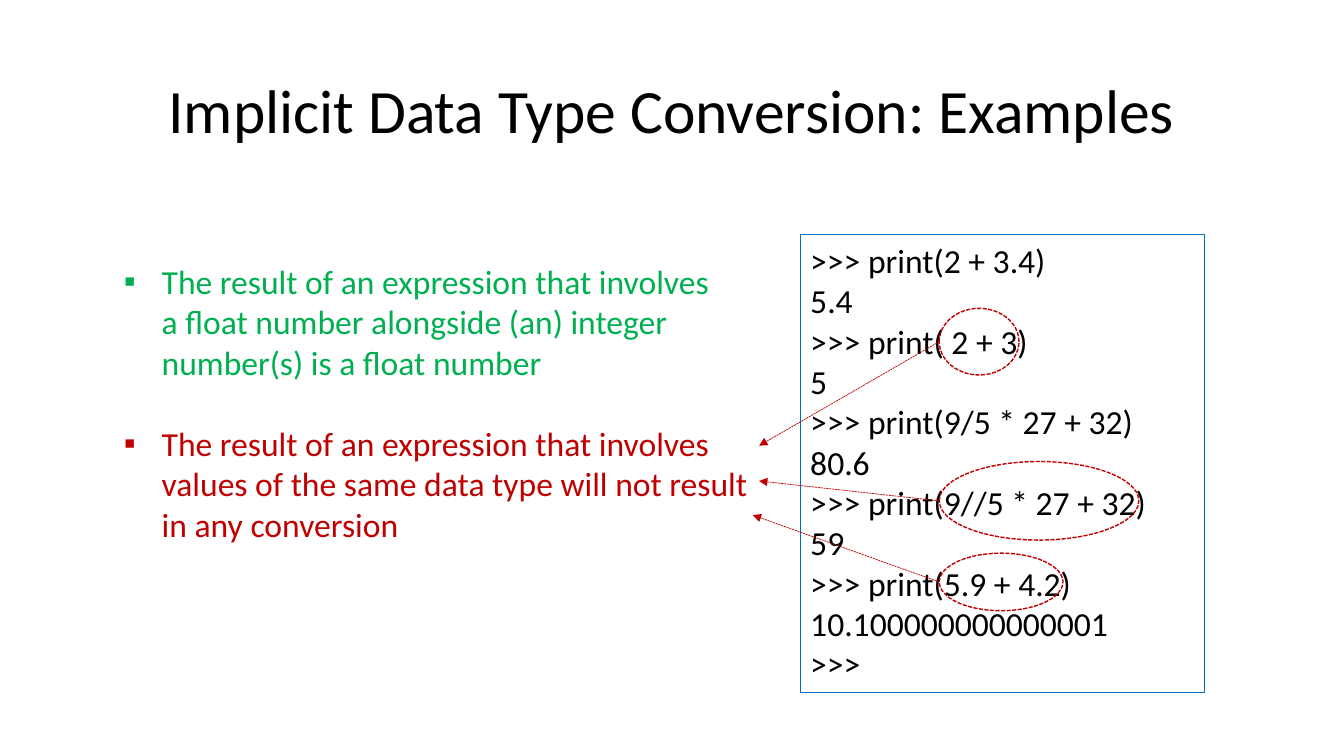
from dataclasses import dataclass

from lxml.etree import SubElement
from pptx import Presentation
from pptx.dml.color import RGBColor
from pptx.enum.dml import MSO_LINE
from pptx.enum.shapes import MSO_CONNECTOR, MSO_SHAPE
from pptx.enum.text import MSO_ANCHOR, MSO_AUTO_SIZE, PP_ALIGN
from pptx.oxml.ns import qn
from pptx.util import Cm, Pt

COLORS = {"text": "000000", "frame": "0070C0", "converted": "00B050", "unchanged": "C00000"}
BULLET_INDENT = Cm(0.95)
CIRCLE_LEFT = 23.67

TITLE = "Implicit Data Type Conversion: Examples"
CONSOLE_LINES = [
    ">>> print(2 + 3.4)", "5.4",
    ">>> print( 2 + 3)", "5",
    ">>> print(9/5 * 27 + 32)", "80.6",
    ">>> print(9//5 * 27 + 32)", "59",
    ">>> print(5.9 + 4.2)", "10.100000000000001",
    ">>>",
]


@dataclass
class Rule:
    text: str
    color: str
    gap_before: float


@dataclass
class Callout:
    """A circled expression and the tip of its arrow, in centimetres."""
    top: float
    width: float
    height: float
    tip_x: float
    tip_y: float


RULES = [
    Rule("The result of an expression that involves\n"
         "a float number alongside (an) integer\n"
         "number(s) is a float number", "converted", 0),
    Rule("The result of an expression that involves\n"
         "values of the same data type will not result\n"
         "in any conversion", "unchanged", 29.3),
]
CALLOUTS = [
    Callout(7.77, 2.01, 1.68, 19.13, 11.23),
    Callout(11.63, 5.03, 1.98, 19.13, 12.12),
    Callout(13.94, 3.12, 1.45, 18.97, 12.98),
]


def apply(target, **formats) -> None:
    for name, value in formats.items():
        setattr(target, name, value)


def color(name: str) -> RGBColor:
    return RGBColor.from_string(COLORS[name])


def place(box, left: float, top: float, width: float, height: float) -> None:
    apply(box, left=Cm(left), top=Cm(top), width=Cm(width), height=Cm(height))


def write(para, text: str, size: int, color_name: str, **formats) -> None:
    """Fill a paragraph; line breaks get the text size too, to keep line heights even."""
    para.text = text
    apply(para, **formats)
    for span in para.runs:
        apply(span.font, name="Calibri", size=Pt(size))
        span.font.color.rgb = color(color_name)
    for line_break in para._p.findall(qn("a:br")):
        SubElement(line_break, qn("a:rPr")).set("sz", str(size * 100))


def style_line(line, color_name: str, width: float, dash=None) -> None:
    line.color.rgb = color(color_name)
    apply(line, width=Pt(width), dash_style=dash)


def add_outline(page, kind, left: float, top: float, width: float, height: float):
    box = page.shapes.add_shape(kind, Cm(left), Cm(top), Cm(width), Cm(height))
    box.shadow.inherit = False
    box.fill.background()
    return box


def fill_title(page) -> None:
    title = page.shapes.title
    place(title, 2.33, 1.02, 29.21, 3.68)
    apply(title.text_frame, vertical_anchor=MSO_ANCHOR.MIDDLE, auto_size=MSO_AUTO_SIZE.NONE)
    write(title.text_frame.paragraphs[0], TITLE, 44, "text",
          alignment=PP_ALIGN.CENTER, line_spacing=0.9)


def add_console(page) -> None:
    console = add_outline(page, MSO_SHAPE.RECTANGLE, 20.17, 5.92, 10.19, 11.53)
    style_line(console.line, "frame", 0.75)
    frame = console.text_frame
    apply(frame, word_wrap=True, vertical_anchor=MSO_ANCHOR.TOP)
    frame.text = "\n".join(CONSOLE_LINES)
    for para, text in zip(frame.paragraphs, CONSOLE_LINES):
        write(para, text, 24, "text", alignment=PP_ALIGN.LEFT)


def fill_rules(page) -> None:
    body = page.placeholders[1]
    place(body, 2.87, 6.45, 16.38, 8.46)
    frame = body.text_frame
    apply(frame, word_wrap=False, auto_size=MSO_AUTO_SIZE.NONE, vertical_anchor=MSO_ANCHOR.TOP)
    for index, rule in enumerate(RULES):
        para = frame.add_paragraph() if index else frame.paragraphs[0]
        write(para, rule.text, 24, rule.color, alignment=PP_ALIGN.LEFT,
              space_before=Pt(rule.gap_before))
        properties = para._p.get_or_add_pPr()
        properties.set("marL", str(BULLET_INDENT))
        properties.set("indent", str(-BULLET_INDENT))
        SubElement(properties, qn("a:buChar")).set("char", "▪")


def add_callout(page, callout: Callout) -> None:
    circle = add_outline(page, MSO_SHAPE.OVAL, CIRCLE_LEFT, callout.top,
                         callout.width, callout.height)
    style_line(circle.line, "unchanged", 1, MSO_LINE.SQUARE_DOT)
    arrow = page.shapes.add_connector(
        MSO_CONNECTOR.STRAIGHT, Cm(CIRCLE_LEFT), Cm(callout.top + callout.height / 2),
        Cm(callout.tip_x), Cm(callout.tip_y))
    style_line(arrow.line, "unchanged", 0.5, MSO_LINE.SQUARE_DOT)
    SubElement(arrow.line._get_or_add_ln(), qn("a:tailEnd")).set("type", "triangle")
    SubElement(arrow._element.spPr, qn("a:effectLst"))


def main() -> None:
    deck = Presentation()
    apply(deck, slide_width=Cm(33.87), slide_height=Cm(19.05))
    page = deck.slides.add_slide(deck.slide_layouts[1])
    fill_title(page)
    add_console(page)
    fill_rules(page)
    for callout in CALLOUTS:
        add_callout(page, callout)
    deck.save("out.pptx")


if __name__ == "__main__":
    main()
